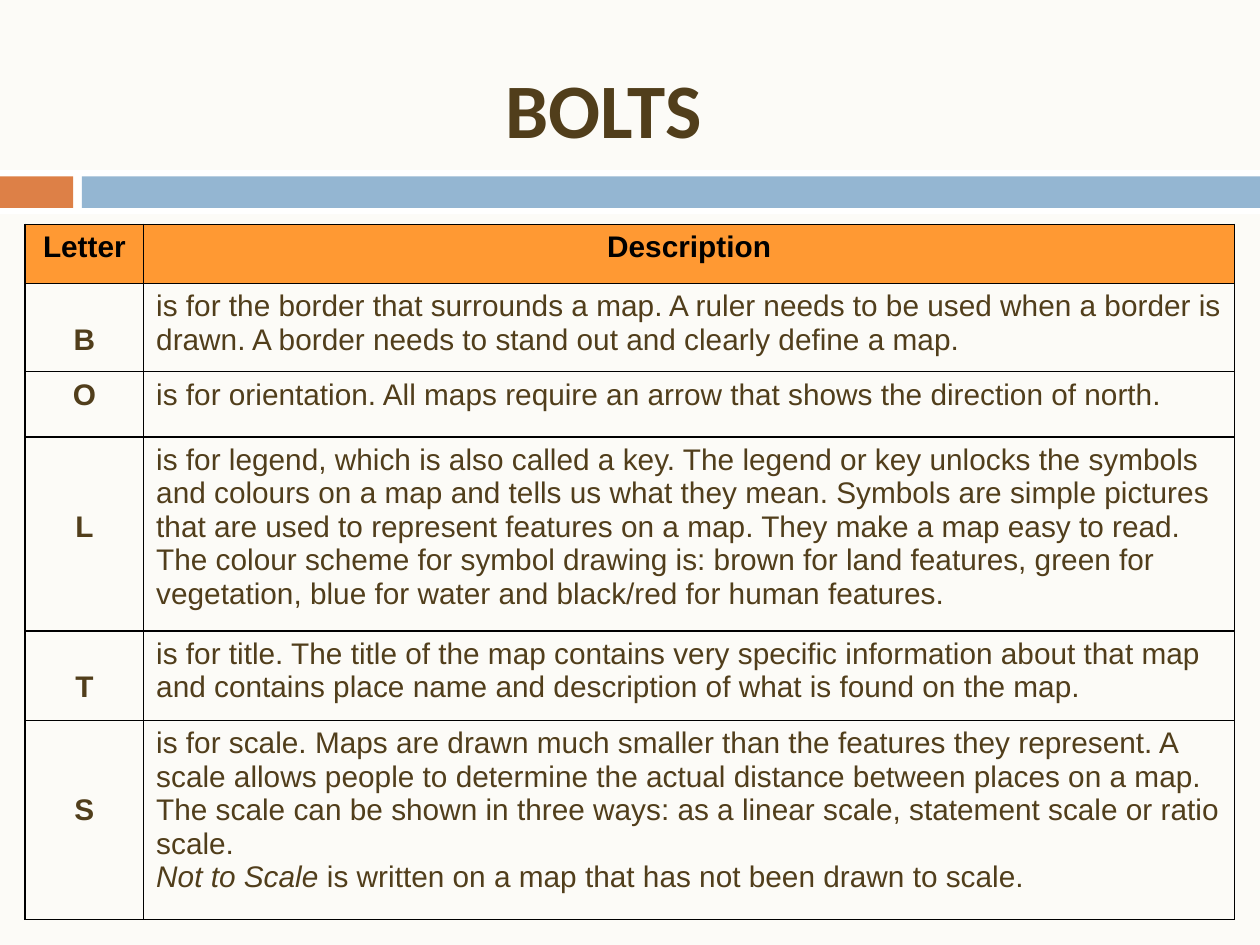
from pptx import Presentation
from pptx.dml.color import RGBColor
from pptx.enum.shapes import MSO_SHAPE
from pptx.enum.text import MSO_ANCHOR, MSO_AUTO_SIZE, PP_ALIGN
from pptx.oxml import parse_xml
from pptx.oxml.ns import nsdecls
from pptx.util import Inches, Pt

RECT = MSO_SHAPE.RECTANGLE
CENTER, LEFT = PP_ALIGN.CENTER, PP_ALIGN.LEFT
TOP = MSO_ANCHOR.TOP
FIT_SHAPE = MSO_AUTO_SIZE.SHAPE_TO_FIT_TEXT

CREAM = RGBColor(0xFC, 0xFB, 0xF7)
WHITE = RGBColor(0xFF, 0xFF, 0xFF)
RUST = RGBColor(0xDD, 0x80, 0x47)
BLUE = RGBColor(0x94, 0xB6, 0xD2)
ORANGE = RGBColor(0xFF, 0x99, 0x33)
BLACK = RGBColor(0, 0, 0)
BROWN = RGBColor(0x51, 0x3E, 0x1B)

TEXT_SIZE = 17
LINE_HEIGHT = 0.264
COLUMN_WIDTHS = [0.94, 8.66]
HEADER_HEIGHT = 0.47
HEADINGS = ["Letter", "Description"]

ENTRIES = [
    ("B", 1, 0.7, [[("is for the border that surrounds a map. A ruler needs to be used when a "
                     "border is drawn. A border needs to stand out and clearly define a map.", False)]]),
    ("O", 0, 0.52, [[("is for orientation. All maps require an arrow that shows the direction "
                      "of north.", False)]]),
    ("L", 2, 1.54, [[("is for legend, which is also called a key. The legend or key unlocks the "
                      "symbols and colours on a map and tells us what they mean. Symbols are "
                      "simple pictures that are used to represent features on a map. They make a "
                      "map easy to read. The colour scheme for symbol drawing is: brown for land "
                      "features, green for vegetation, blue for water and black/red for human "
                      "features.", False)]]),
    ("T", 1, 0.71, [[("is for title. The title of the map contains very specific information "
                      "about that map and contains place name and description of what is found "
                      "on the map.", False)]]),
    ("S", 2, 1.58, [[("is for scale. Maps are drawn much smaller than the features they "
                      "represent. A scale allows people to determine the actual distance between "
                      "places on a map. The scale can be shown in three ways: as a linear scale, "
                      "statement scale or ratio scale.", False)],
                    [("Not to Scale ", True),
                     ("is written on a map that has not been drawn to scale.", False)]]),
]


def add_bar(slide, left, top, width, height, color):
    sp = slide.shapes.add_shape(RECT, Inches(left), Inches(top), Inches(width), Inches(height))
    sp.shadow.inherit = False
    sp.fill.solid()
    sp.fill.fore_color.rgb = color
    sp.line.fill.background()


def add_band(slide, left, top, width, height):
    inset, accent, gap = 0.05, 0.58, 0.07
    bar_height = height - 2 * inset
    rest = accent + gap
    add_bar(slide, left, top, width, height, WHITE)
    add_bar(slide, left, top + inset, accent, bar_height, RUST)
    add_bar(slide, left + rest, top + inset, width - rest, bar_height, BLUE)


def add_title(slide, left, top, width, height):
    sp = slide.shapes.add_textbox(Inches(left), Inches(top), Inches(width), Inches(height))
    tf = sp.text_frame
    tf.word_wrap = False
    tf.auto_size = FIT_SHAPE
    p = tf.paragraphs[0]
    p.text = "BOLTS"
    p.alignment = CENTER
    style_run(p.runs[0], BROWN, 44, "Calibri", bold=True)


def style_run(r, color, size=TEXT_SIZE, name="Arial", bold=False, italic=False):
    r.font.size = Pt(size)
    r.font.name = name
    r.font.bold = bold
    r.font.italic = italic
    r.font.color.rgb = color


def set_borders(cell):
    tcPr = cell._tc.get_or_add_tcPr()
    for i, side in enumerate(("lnL", "lnR", "lnT", "lnB")):
        tcPr.insert(i, parse_xml(
            f'<a:{side} {nsdecls("a")} w="{Pt(1)}"><a:solidFill>'
            f'<a:srgbClr val="{BLACK}"/></a:solidFill></a:{side}>'))


def fill_cell(cell, paragraphs, color, align=LEFT, bold=False, fill=None, lines_above=0):
    cell.vertical_anchor = TOP
    cell.margin_top = Inches(0.05 + lines_above * LINE_HEIGHT)
    if fill is None:
        cell.fill.background()
    else:
        cell.fill.solid()
        cell.fill.fore_color.rgb = fill
    set_borders(cell)
    tf = cell.text_frame
    for i, parts in enumerate(paragraphs):
        p = tf.add_paragraph() if i else tf.paragraphs[0]
        p.alignment = align
        for text, italic in parts:
            r = p.add_run()
            r.text = text
            style_run(r, color, bold=bold, italic=italic)


def add_bolts_table(slide, left, top, width, height):
    frame = slide.shapes.add_table(len(ENTRIES) + 1, len(HEADINGS), Inches(left), Inches(top),
                                   Inches(width), Inches(height))
    table = frame.table
    table.horz_banding = False
    for column, column_width in zip(table.columns, COLUMN_WIDTHS):
        column.width = Inches(column_width)
    table.rows[0].height = Inches(HEADER_HEIGHT)
    for col, heading in enumerate(HEADINGS):
        fill_cell(table.cell(0, col), [[(heading, False)]], BLACK, CENTER, True, ORANGE)
    for row, (letter, lines_above, row_height, description) in enumerate(ENTRIES, 1):
        table.rows[row].height = Inches(row_height)
        fill_cell(table.cell(row, 0), [[(letter, False)]], BROWN, CENTER, True,
                  lines_above=lines_above)
        fill_cell(table.cell(row, 1), description, BROWN)


def main():
    prs = Presentation()
    prs.slide_width, prs.slide_height = Inches(10), Inches(7.5)
    slide = prs.slides.add_slide(prs.slide_layouts[6])
    slide.background.fill.solid()
    slide.background.fill.fore_color.rgb = CREAM
    add_band(slide, 0, 1.35, 10, 0.35)
    add_bolts_table(slide, 0.2, 1.78, 9.6, 5.53)
    add_title(slide, 3.88, 0.44, 1.82, 0.84)
    prs.save("out.pptx")


if __name__ == "__main__":
    main()
